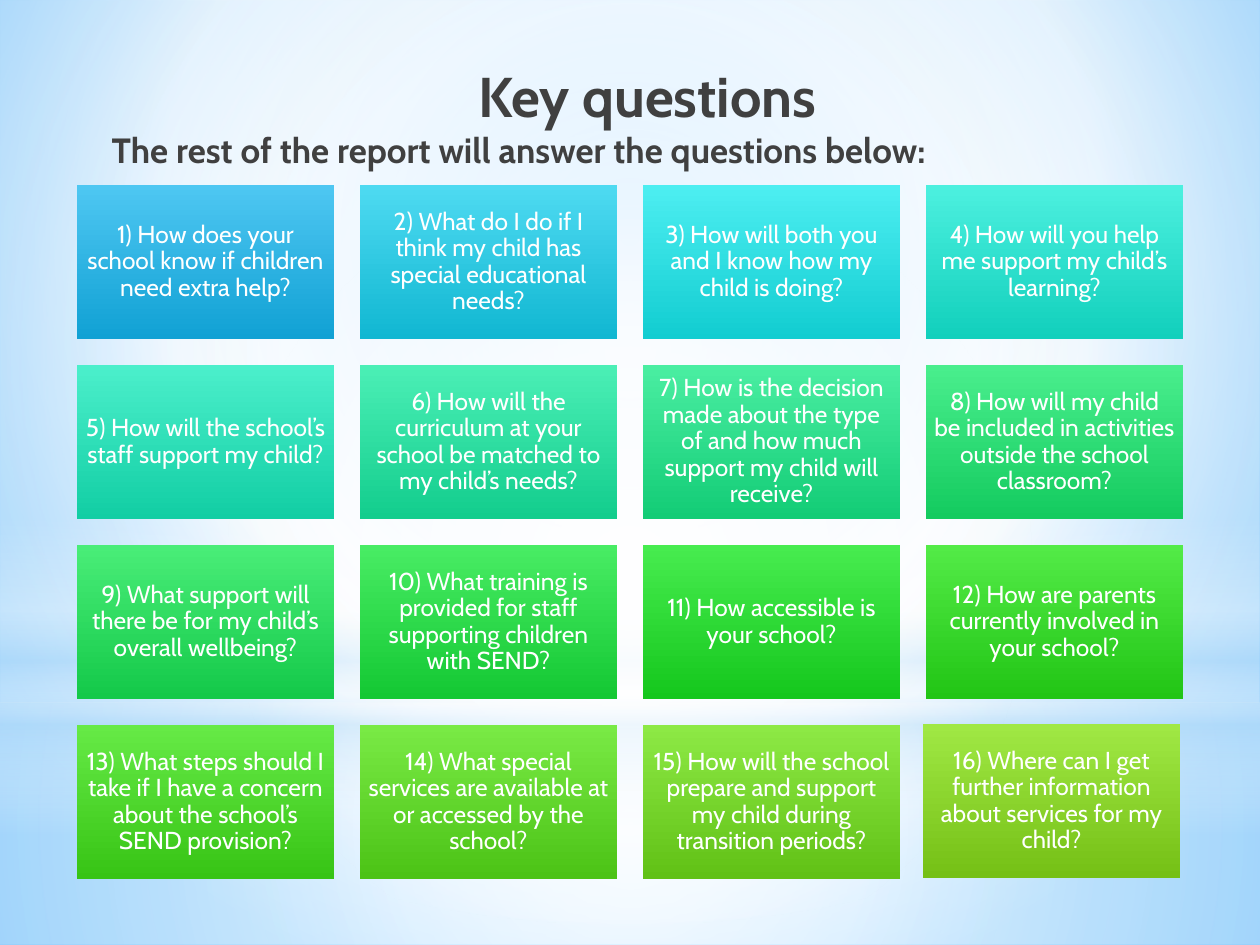
from lxml import etree
from pptx import Presentation
from pptx.dml.color import RGBColor
from pptx.enum.shapes import MSO_SHAPE
from pptx.enum.text import MSO_ANCHOR, MSO_AUTO_SIZE, PP_ALIGN
from pptx.oxml.ns import qn
from pptx.util import Emu, Pt

RECTANGLE, OVAL = MSO_SHAPE.RECTANGLE, MSO_SHAPE.OVAL
TOP, MIDDLE = MSO_ANCHOR.TOP, MSO_ANCHOR.MIDDLE
LEFT, CENTER = PP_ALIGN.LEFT, PP_ALIGN.CENTER
NO_FIT = MSO_AUTO_SIZE.NONE
FONT = "Cabin"
CENTRED = (50, 50, 50, 50)
COLOURS = {"white": "FFFFFF", "mist": "B4DCFA", "sky": "9ED5FF",
           "blue": "5BB9FF", "heading": "404040"}
WHITE, MIST = COLOURS["white"], COLOURS["mist"]
CARD_COLOURS = {
    "1) How does your school know if children need extra help?": ("4EC7F2", "11A1D4"),
    "2) What do I do if I think my child has special educational needs?": ("4EDAF1", "11B7D2"),
    "3) How will both you and I know how my child is doing?": ("4DEEF1", "12CDD1"),
    "4) How will you help me support my child’s learning?": ("4CF0DF", "12D0BC"),
    "5) How will the school’s staff support my child?": ("4BEFCB", "12CEA4"),
    "6) How will the curriculum at your school be matched to my child’s needs?": ("4BEFB6", "13CD8D"),
    "7) How is the decision made about the type of and how much support my child will receive?": ("4AEEA2", "13CC76"),
    "8) How will my child be included in activities outside the school classroom?": ("49EE8D", "14CB5F"),
    "9) What support will there be for my child’s overall wellbeing?": ("49ED78", "14C949"),
    "10) What training is provided for staff supporting children with SEND?": ("48EC64", "14C833"),
    "11) How accessible is your school?": ("47EC4F", "15C71D"),
    "12) How are parents currently involved in your school?": ("53EB47", "22C515"),
    "13) What steps should I take if I have a concern about the school’s SEND provision?": ("66EA46", "37C415"),
    "14) What special services are available at or accessed by the school?": ("79EA45", "4CC316"),
    "15) How will the school prepare and support my child during transition periods?": ("8DE945", "61C116"),
    "16) Where can I get further information about services for my child?": ("A0E844", "75C016"),
}


def px(length):
    return Emu(round(length * 914400 / 126))


def paint(fill, owner, stops, focus=None):
    fill.gradient()
    gradient = owner.find(".//" + qn("a:gradFill"))
    for child in list(gradient):
        gradient.remove(child)
    stop_list = etree.SubElement(gradient, qn("a:gsLst"))
    for position, colour, opacity in stops:
        stop = etree.SubElement(stop_list, qn("a:gs"), pos=str(position * 1000))
        shade = etree.SubElement(stop, qn("a:srgbClr"), val=colour)
        if opacity < 100:
            etree.SubElement(shade, qn("a:alpha"), val=str(opacity * 1000))
    if focus:
        circle = etree.SubElement(gradient, qn("a:path"), path="circle")
        sides = {side: str(share * 1000) for side, share in zip("ltrb", focus)}
        etree.SubElement(circle, qn("a:fillToRect"), **sides)
    else:
        etree.SubElement(gradient, qn("a:lin"), ang="5400000", scaled="0")


deck = Presentation()
deck.slide_width, deck.slide_height = px(1260), px(945)
page = deck.slides.add_slide(deck.slide_layouts[5])
paint(page.background.fill, page.element,
      [(0, COLOURS["sky"], 100), (60, WHITE, 100), (100, COLOURS["blue"], 100)],
      (20, 10, 20, 60))

backdrop = [
    (RECTANGLE, 703, 242, [(0, WHITE, 91), (37, WHITE, 76), (100, MIST, 79)], CENTRED),
    (RECTANGLE, 0, 703, [(0, WHITE, 89), (48, WHITE, 62), (100, MIST, 79)], CENTRED),
    (RECTANGLE, 519, 315, [(0, WHITE, 0), (29, WHITE, 30), (45, MIST, 40),
                           (55, WHITE, 26), (65, MIST, 60), (100, WHITE, 0)], None),
    (OVAL, 220, 703, [(0, WHITE, 100), (56, WHITE, 0)], CENTRED),
]
for kind, top, height, stops, focus in backdrop:
    glow = page.shapes.add_shape(kind, 0, px(top), px(1260), px(height))
    glow.shadow.inherit = False
    glow.line.fill.background()
    paint(glow.fill, glow.element, stops, focus)

for index, (question, (light, dark)) in enumerate(CARD_COLOURS.items()):
    row, column = divmod(index, 4)
    card = page.shapes.add_shape(RECTANGLE, px(77 + 283 * column), px(185 + 180 * row),
                                 px(257), px(154))
    card.shadow.inherit = False
    card.line.fill.background()
    paint(card.fill, card.element, [(0, light, 100), (100, dark, 100)])
    frame = card.text_frame
    frame.text = question
    frame.word_wrap = True
    frame.vertical_anchor = MIDDLE
    frame.margin_left = frame.margin_right = frame.margin_top = frame.margin_bottom = px(8)
    para = frame.paragraphs[0]
    para.alignment = CENTER
    para.line_spacing = 0.9
    para.space_after = Pt(5)
    span = para.runs[0]
    span.font.name = FONT
    span.font.size = Pt(14)
    span.font.color.rgb = RGBColor.from_string(WHITE)
card.left, card.top = px(923), px(724)

title = page.shapes.title
page.shapes.element.append(title.element)
title.left, title.top, title.width, title.height = px(74), px(55), px(1122), px(179)
frame = title.text_frame
frame.text = "Key questions\nThe rest of the report will answer the questions below:"
frame.word_wrap = True
frame.auto_size = NO_FIT
frame.vertical_anchor = TOP
for para, size, alignment in zip(frame.paragraphs, (32, 20), (CENTER, LEFT)):
    para.alignment = alignment
    properties = para.runs[0].font
    properties.name = FONT
    properties.size = Pt(size)
    properties.bold = True
    properties.color.rgb = RGBColor.from_string(COLOURS["heading"])
    indent = para._p.get_or_add_pPr()
    indent.set("marL", str(px(25)))
    indent.set("indent", "0")

deck.save("out.pptx")
